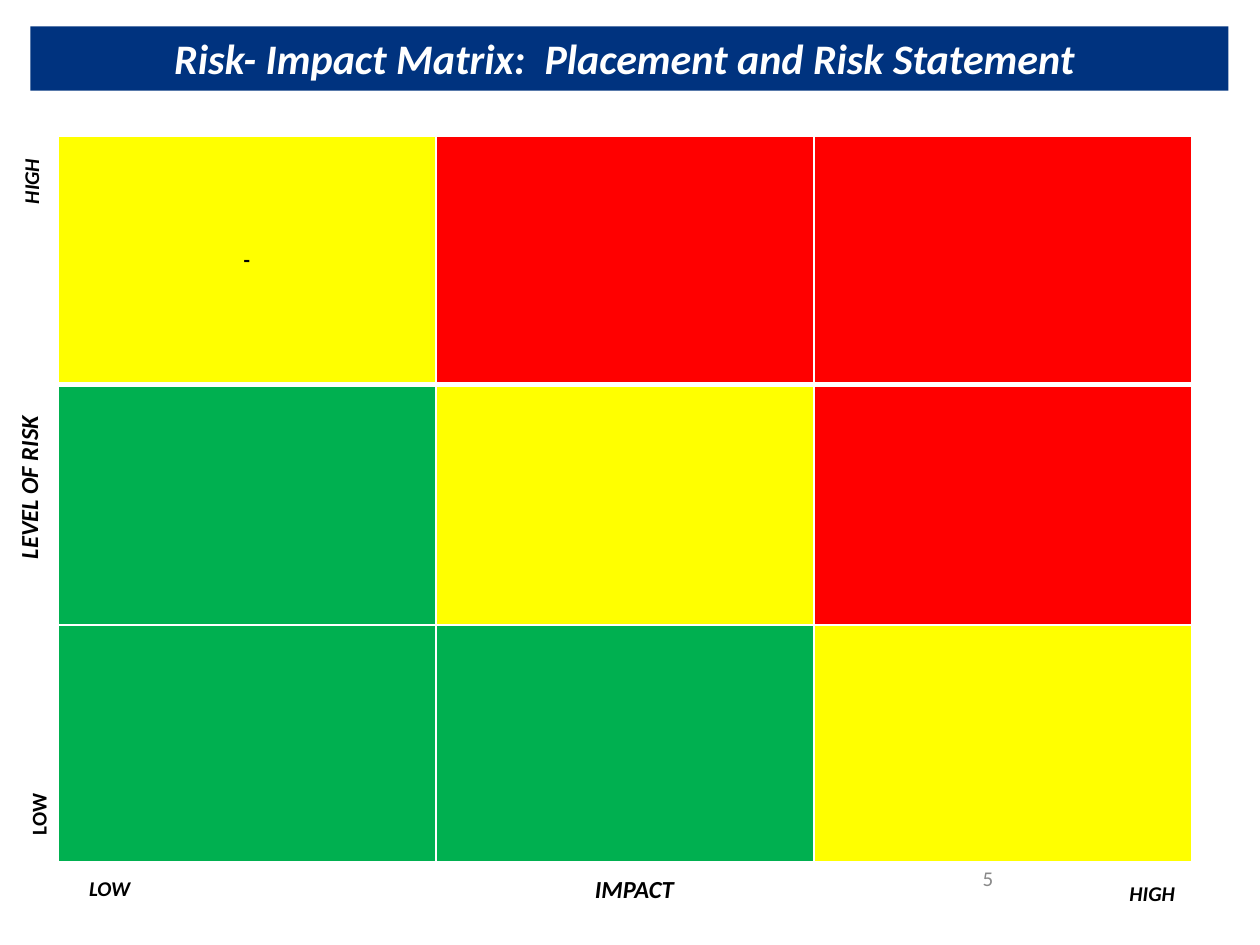
from lxml import etree
from pptx import Presentation
from pptx.dml.color import RGBColor
from pptx.enum import text as t
from pptx.oxml import ns
from pptx.util import Inches, Pt

TITLE = "Risk- Impact Matrix:  Placement and Risk Statement "
RED, YELLOW, GREEN = "FF0000", "FFFF00", "00B050"
GRID = [
    (1.97, [YELLOW, RED, RED]),
    (1.91, [GREEN, YELLOW, RED]),
    (1.88, [GREEN, GREEN, YELLOW]),
]
COL = 3
MARK = "-"
MID, LEFT = t.PP_ALIGN.CENTER, t.PP_ALIGN.LEFT
BASE = {"name": "Calibri", "size": 12, "bold": True, "italic": True}
# text, (left, top, width, height), rotation, alignment, colour, format changes
LABELS = [
    ("LEVEL OF RISK", (-0.59, 3.7, 1.64, 0.34), 270, MID, "000000", {"size": 14}),
    ("LOW", (-0.1, 6.17, 0.81, 0.3), 270, LEFT, "000000", {"italic": False}),
    ("HIGH", (-0.29, 1.29, 1.07, 0.3), 270, MID, "000000", {}),
    ("LOW", (0.38, 6.9, 0.98, 0.3), 0, MID, "000000", {}),
    ("IMPACT", (4.55, 6.89, 0.97, 0.34), 0, MID, "000000", {"size": 14}),
    ("HIGH", (8.66, 6.94, 0.97, 0.3), 0, MID, "000000", {}),
    ("5", (7.7, 6.82, 2.1, 0.3), 0, LEFT, "898989", {"bold": False, "italic": False}),
]


def rgb(code):
    return RGBColor.from_string(code)


def write(frame, words, align, color, **form):
    frame.text = words
    para = frame.paragraphs[0]
    para.alignment = align
    font = para.runs[0].font
    for key, val in {**BASE, **form}.items():
        setattr(font, key, Pt(val) if key == "size" else val)
    font.color.rgb = rgb(color)


def edge(cell, side, width):
    """Draw a white border on one side (L, R, T or B) of a cell."""
    props = cell._tc.get_or_add_tcPr()
    line = etree.SubElement(props, ns.qn("a:ln" + side), w=str(Pt(width)))
    fill = etree.SubElement(line, ns.qn("a:solidFill"))
    etree.SubElement(fill, ns.qn("a:srgbClr"), val="FFFFFF")


def add_title(slide):
    title = slide.shapes.title
    title.left, title.top, title.width, title.height = map(Inches, (0.24, 0.21, 9.51, 0.51))
    title.fill.solid()
    title.fill.fore_color.rgb = rgb("00337F")
    frame = title.text_frame
    write(frame, TITLE, MID, "FFFFFF", size=24)
    frame.auto_size = t.MSO_AUTO_SIZE.NONE
    frame.vertical_anchor = t.MSO_ANCHOR.TOP


def add_grid(slide):
    rows, cols = len(GRID), len(GRID[0][1])
    high = sum(h for h, _ in GRID)
    box = map(Inches, (0.46, 1.08, COL * cols, high))
    table = slide.shapes.add_table(rows, cols, *box).table
    for r, (height, colors) in enumerate(GRID):
        table.rows[r].height = Inches(height)
        for c, color in enumerate(colors):
            cell = table.cell(r, c)
            for side in "LRTB":
                thick = (r, side) in ((0, "B"), (1, "T"))
                edge(cell, side, 3 if thick else 1)
            cell.fill.solid()
            cell.fill.fore_color.rgb = rgb(color)
    first = table.cell(0, 0)
    first.vertical_anchor = t.MSO_ANCHOR.MIDDLE
    write(first.text_frame, MARK, MID, "000000", italic=False)


def add_label(slide, words, box, turn, align, color, form):
    label = slide.shapes.add_textbox(*map(Inches, box))
    label.rotation = turn
    label.text_frame.word_wrap = True
    write(label.text_frame, words, align, color, **form)


def main():
    deck = Presentation()
    deck.slide_width, deck.slide_height = Inches(10), Inches(7.5)
    slide = deck.slides.add_slide(deck.slide_layouts[5])
    add_title(slide)
    add_grid(slide)
    for label in LABELS:
        add_label(slide, *label)
    deck.save("out.pptx")


if __name__ == "__main__":
    main()
